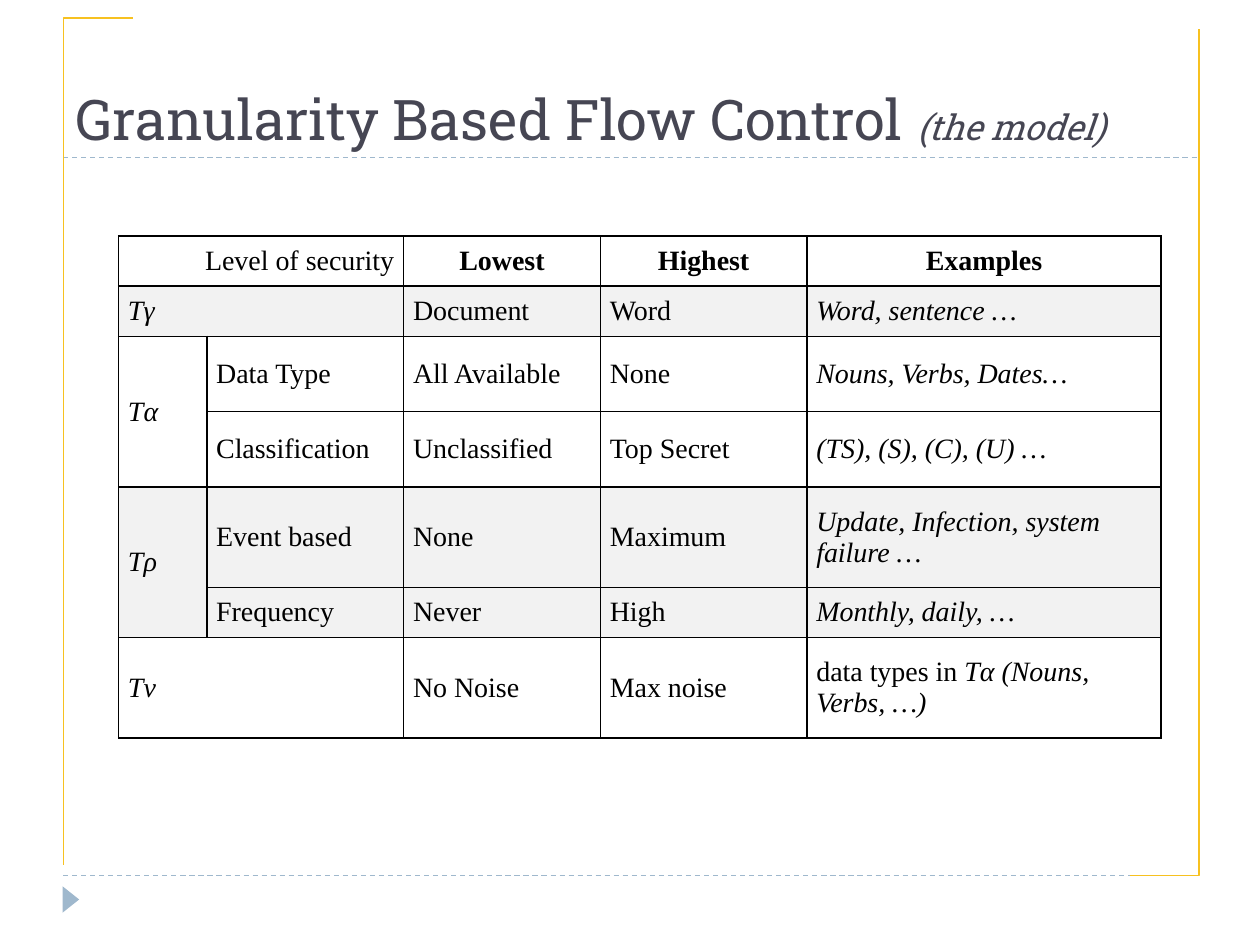
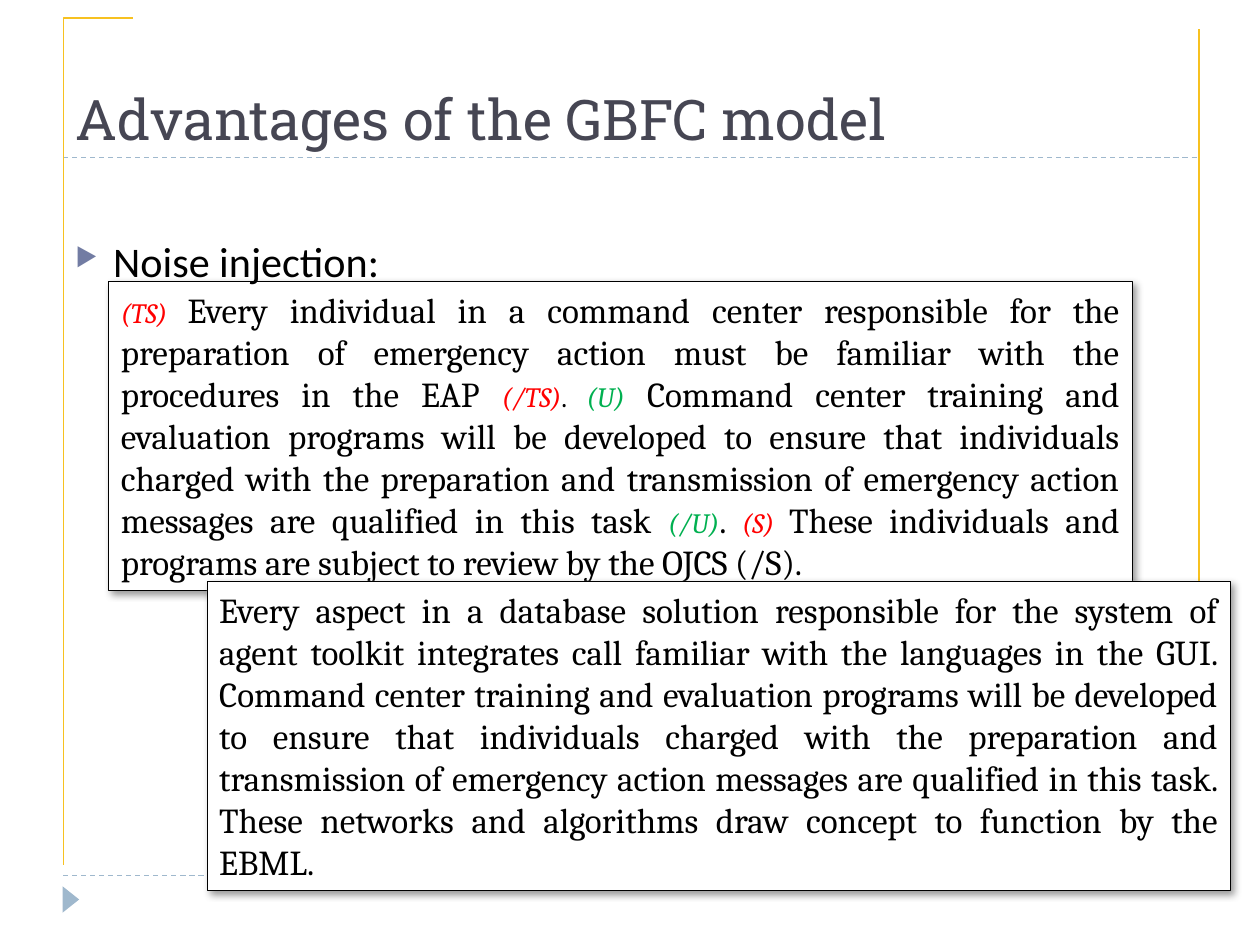
from lxml import etree
from pptx import Presentation
from pptx.dml.color import RGBColor
from pptx.enum.dml import MSO_LINE
from pptx.enum.shapes import MSO_CONNECTOR, MSO_SHAPE
from pptx.enum.text import MSO_ANCHOR, MSO_AUTO_SIZE, PP_ALIGN
from pptx.oxml import parse_xml
from pptx.oxml.ns import nsdecls, qn
from pptx.util import Pt

COLORS = {
    "title": "464653", "text": "000000", "white": "FFFFFF", "shade": "F2F2F2",
    "accent": "F7C120", "marker": "9FB8CD", "bullet": "727CA3",
    "secret": "FF0000", "open": "00B050",
}
TITLE_FONT, BODY_FONT, QUOTE_FONT, TABLE_FONT = (
    "Roboto Slab", "Calibri", "Cambria", "Times New Roman")

SECURITY_ROWS = [
    ["Level of security", None, "Lowest", "Highest", "Examples"],
    ["Tγ", None, "Document", "Word", "Word, sentence …"],
    ["Tα", "Data Type", "All Available", "None", "Nouns, Verbs, Dates…"],
    [None, "Classification", "Unclassified", "Top Secret", "(TS), (S), (C), (U) …"],
    ["Tρ", "Event based", "None", "Maximum", "Update, Infection, system failure …"],
    [None, "Frequency", "Never", "High", "Monthly, daily, …"],
    ["Tν", None, "No Noise", "Max noise", "Tα (Nouns, Verbs, …)"],
]
COLUMN_WIDTHS = [50.4, 112.5, 112.5, 118, 202.5]
ROW_UNITS = [1, 1, 1.5, 1.5, 2, 1, 2]
ROW_UNIT = 28.7
SHADED_ROWS = {1, 4, 5}
MERGES = [((0, 0), (0, 1)), ((1, 0), (1, 1)), ((2, 0), (3, 0)),
          ((4, 0), (5, 0)), ((6, 0), (6, 1))]


def rgb(name):
    return RGBColor.from_string(COLORS[name])


class Deck:
    """Holds the shared style and the slide being built."""

    def __init__(self):
        self.presentation = Presentation()
        self.presentation.slide_width = Pt(720)
        self.presentation.slide_height = Pt(540)
        self.slide = None

    def add_slide(self):
        layout = self.presentation.slide_layouts[6]
        self.slide = self.presentation.slides.add_slide(layout)
        for y in (500.4, 90):
            rule = self.line(MSO_CONNECTOR.STRAIGHT, 36, y, 684, y, "marker")
            rule.line.dash_style = MSO_LINE.DASH
        marker = self.shape(MSO_SHAPE.ISOSCELES_TRIANGLE, 33, 509.3, 15, 9.4, "marker")
        marker.rotation = 90
        self.bracket(645.6, 16.7, 39.6, 483.8, flipped=True)
        self.bracket(36.2, 10.3, 39.6, 483.8)

    def line(self, kind, x1, y1, x2, y2, color):
        connector = self.slide.shapes.add_connector(
            kind, Pt(x1), Pt(y1), Pt(x2), Pt(y2))
        connector.line.color.rgb = rgb(color)
        connector.line.width = Pt(0.75)
        etree.SubElement(connector._element.spPr, qn("a:effectLst"))
        return connector

    def bracket(self, left, top, width, height, flipped=False):
        """Draw a corner in the given box: top left, or bottom right if flipped."""
        center_x, center_y = left + width / 2, top + height / 2
        start = center_x - height / 2, center_y - width / 2
        end = center_x + height / 2, center_y + width / 2
        if flipped:
            start, end = end, start
        connector = self.line(MSO_CONNECTOR.ELBOW, *start, *end, "accent")
        properties = connector._element.spPr
        properties.find(qn("a:xfrm")).set("rot", "5400000")
        adjustments = properties.find(qn("a:prstGeom")).find(qn("a:avLst"))
        etree.SubElement(adjustments, qn("a:gd"), name="adj1", fmla="val 0")

    def shape(self, kind, left, top, width, height, fill):
        shape = self.slide.shapes.add_shape(
            kind, Pt(left), Pt(top), Pt(width), Pt(height))
        shape.shadow.inherit = False
        shape.fill.solid()
        shape.fill.fore_color.rgb = rgb(fill)
        shape.line.fill.background()
        return shape

    def run(self, paragraph, text, font, size, color="text", italic=False, bold=False):
        run = paragraph.add_run()
        run.text = text
        run.font.name = font
        run.font.size = Pt(size)
        run.font.color.rgb = rgb(color)
        run.font.italic = italic
        run.font.bold = bold

    def text_box(self, left, top, width, height, anchor):
        """Add a wrapping text box and return its first paragraph."""
        box = self.slide.shapes.add_textbox(Pt(left), Pt(top), Pt(width), Pt(height))
        box.text_frame.word_wrap = True
        box.text_frame.vertical_anchor = anchor
        return box.text_frame.paragraphs[0]

    def title(self, text, aside=None):
        paragraph = self.text_box(36, 12.2, 648, 77.8, MSO_ANCHOR.BOTTOM)
        self.run(paragraph, text, TITLE_FONT, 32, "title")
        if aside:
            self.run(paragraph, aside, TITLE_FONT, 20, "title", italic=True)

    def bullet(self, text, top):
        paragraph = self.text_box(36, top, 648, 36, MSO_ANCHOR.TOP)
        properties = paragraph._p.get_or_add_pPr()
        properties.set("marL", str(Pt(21.6)))
        properties.set("indent", str(-Pt(21.6)))
        color = etree.SubElement(properties, qn("a:buClr"))
        etree.SubElement(color, qn("a:srgbClr"), val=COLORS["bullet"])
        etree.SubElement(properties, qn("a:buSzPct"), val="60000")
        etree.SubElement(properties, qn("a:buChar"), char="▶")
        self.run(paragraph, text, BODY_FONT, 24.1)

    def quote(self, left, top, runs):
        """Add a shadowed box of justified (text, size, color, italic) runs."""
        box = self.shape(MSO_SHAPE.RECTANGLE, left, top, 585, 177, "white")
        box.line.color.rgb = rgb("text")
        box.line.width = Pt(0.25)
        effects = box._element.spPr.find(qn("a:effectLst"))
        effects.append(parse_xml(
            f'<a:outerShdw {nsdecls("a")} blurRad="{Pt(4)}" dist="{Pt(3)}" '
            'dir="2700000" algn="tl" rotWithShape="0"><a:srgbClr val="000000">'
            '<a:alpha val="40000"/></a:srgbClr></a:outerShdw>'))
        frame = box.text_frame
        frame.word_wrap = True
        frame.auto_size = MSO_AUTO_SIZE.SHAPE_TO_FIT_TEXT
        frame.vertical_anchor = MSO_ANCHOR.MIDDLE
        paragraph = frame.paragraphs[0]
        paragraph.alignment = PP_ALIGN.JUSTIFY
        for text, size, color, italic in runs:
            self.run(paragraph, text, QUOTE_FONT, size, color, italic)

    def style_cell(self, cell, shaded):
        properties = cell._tc.get_or_add_tcPr()
        for side in ("lnL", "lnR", "lnT", "lnB"):
            properties.append(parse_xml(
                f'<a:{side} {nsdecls("a")} w="{Pt(1)}"><a:solidFill>'
                f'<a:srgbClr val="{COLORS["text"]}"/></a:solidFill></a:{side}>'))
        if shaded:
            cell.fill.solid()
            cell.fill.fore_color.rgb = rgb("shade")
        else:
            cell.fill.background()
        cell.vertical_anchor = MSO_ANCHOR.MIDDLE
        cell.margin_left = cell.margin_right = Pt(5.4)
        cell.margin_top = cell.margin_bottom = 0

    def security_table(self, left, top):
        table = self.slide.shapes.add_table(
            len(SECURITY_ROWS), len(COLUMN_WIDTHS), Pt(left), Pt(top),
            Pt(sum(COLUMN_WIDTHS)), Pt(ROW_UNIT * sum(ROW_UNITS))).table
        table.first_row = table.horz_banding = False
        for column, width in zip(table.columns, COLUMN_WIDTHS):
            column.width = Pt(width)
        for row, units in zip(table.rows, ROW_UNITS):
            row.height = Pt(ROW_UNIT * units)
        for first, last in MERGES:
            table.cell(*first).merge(table.cell(*last))
        for r, texts in enumerate(SECURITY_ROWS):
            for c, text in enumerate(texts):
                cell = table.cell(r, c)
                self.style_cell(cell, r in SHADED_ROWS)
                if text is None:
                    continue
                paragraph = cell.text_frame.paragraphs[0]
                if r == 0:
                    paragraph.alignment = PP_ALIGN.CENTER if c else PP_ALIGN.RIGHT
                if (r, c) == (6, 4):
                    self.run(paragraph, "data types in ", TABLE_FONT, 16)
                self.run(paragraph, text, TABLE_FONT, 16,
                         italic=r > 0 and c in (0, 4), bold=r == 0 and c > 0)


def model_slide(deck):
    deck.add_slide()
    deck.title("Granularity Based Flow Control ", "(the model)")
    deck.security_table(67.75, 134.85)


def advantages_slide(deck):
    deck.add_slide()
    deck.quote(62, 160.6, [
        ("(TS) ", 16, "secret", True),
        ("Every individual in a command center responsible for the preparation of "
         "emergency action must be familiar with the procedures in the EAP ",
         20, "text", False),
        ("(/TS)", 16, "secret", True),
        (". ", 16, "text", False),
        ("(U)", 16, "open", True),
        (" Command center training and evaluation programs will be developed to "
         "ensure that individuals charged with the preparation and transmission of "
         "emergency action messages are qualified in this task ", 20, "text", False),
        ("(/U)", 16, "open", True),
        (". ", 20, "text", False),
        ("(S) ", 16, "secret", True),
        ("These individuals and programs are subject to review by the OJCS (/S).",
         20, "text", False),
    ])
    deck.title("Advantages of the GBFC model")
    deck.bullet("Noise injection:", 130.9)
    deck.quote(118.2, 332, [
        ("Every aspect in a database solution responsible for the system of agent "
         "toolkit integrates call familiar with the languages in the GUI. Command "
         "center training and evaluation programs will be developed to ensure that "
         "individuals charged with the preparation and transmission of emergency "
         "action messages are qualified in this task. These networks and algorithms "
         "draw concept to function by the EBML.", 20, "text", False),
    ])


def main():
    deck = Deck()
    model_slide(deck)
    advantages_slide(deck)
    deck.presentation.save("out.pptx")


if __name__ == "__main__":
    main()
